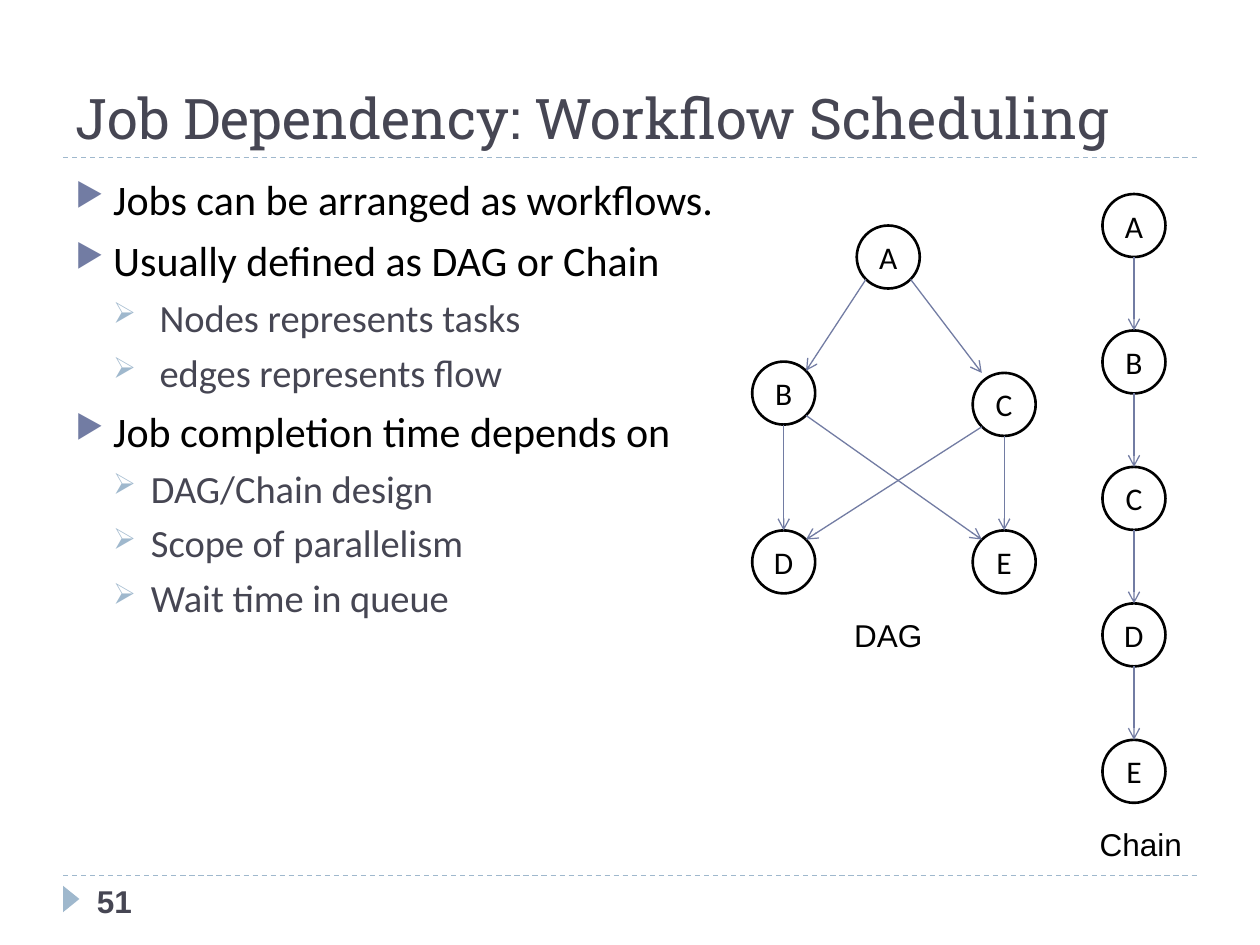
from lxml.etree import SubElement
from pptx import Presentation
from pptx.dml.color import RGBColor
from pptx.enum.dml import MSO_LINE
from pptx.enum.shapes import MSO_CONNECTOR, MSO_SHAPE
from pptx.enum.text import MSO_ANCHOR, PP_ALIGN
from pptx.oxml.ns import qn
from pptx.util import Inches, Pt

BLACK = RGBColor(0x00, 0x00, 0x00)
WHITE = RGBColor(0xFF, 0xFF, 0xFF)
SLATE = RGBColor(0x46, 0x46, 0x53)
INDIGO = RGBColor(0x72, 0x7C, 0xA3)
PALE_BLUE = RGBColor(0x9F, 0xB8, 0xCD)

RADIUS = 0.25
DIAGONAL = 0.71
CHAIN_X, CHAIN_TOP, CHAIN_STEP = 9, 1.79, 1.083
LEVELS = [("▶", INDIGO, 24, BLACK, 0.3, 6), ("➢", PALE_BLUE, 22, SLATE, 0.6, 5)]
BULLETS = [
    (0, ["Jobs can be arranged as workflows."]),
    (0, ["Usually defined as DAG or Chain"]),
    (1, [" ", "Nodes represents tasks"]),
    (1, [" edges represents flow"]),
    (0, ["Job completion time depends on"]),
    (1, ["DAG/Chain design"]),
    (1, ["Scope of parallelism"]),
    (1, ["Wait time in queue"]),
]
DAG_NODES = {"A": (7.05, 2.04), "B": (6.22, 3.12), "C": (7.97, 3.21),
             "D": (6.22, 4.46), "E": (7.97, 4.46)}
TOP, BOTTOM = (0, -1), (0, 1)
TOP_LEFT, TOP_RIGHT = (-DIAGONAL, -DIAGONAL), (DIAGONAL, -DIAGONAL)
BOTTOM_LEFT, BOTTOM_RIGHT = (-DIAGONAL, DIAGONAL), (DIAGONAL, DIAGONAL)
DAG_EDGES = [
    ("A", BOTTOM_LEFT, "B", TOP_RIGHT),
    ("A", BOTTOM_RIGHT, "C", (-DIAGONAL, -1)),
    ("B", BOTTOM, "D", TOP),
    ("C", BOTTOM, "E", TOP),
    ("B", BOTTOM_RIGHT, "E", TOP_LEFT),
    ("C", BOTTOM_LEFT, "D", TOP_RIGHT),
]


def add_run(paragraph, text, size, color, font="Calibri", bold=False):
    """Append one formatted run to a paragraph."""
    run = paragraph.add_run()
    run.text = text
    run.font.name = font
    run.font.size = Pt(size)
    run.font.bold = bold
    run.font.color.rgb = color


def add_line(slide, start, end, color):
    """Draw a thin straight connector without a shadow."""
    line = slide.shapes.add_connector(
        MSO_CONNECTOR.STRAIGHT, *map(Inches, (*start, *end)))
    line.line.color.rgb = color
    line.line.width = Pt(0.75)
    SubElement(line._element.spPr, qn("a:effectLst"))
    return line


def add_rule(slide, y):
    """Draw a dashed rule across the slide."""
    add_line(slide, (0.5, y), (9.5, y), PALE_BLUE).line.dash_style = MSO_LINE.DASH


def add_edge(slide, start_center, start_port, end_center, end_port):
    """Draw an arrow between ports given in radii from the node centers."""
    start, end = (
        [middle + RADIUS * offset for middle, offset in zip(center, port)]
        for center, port in ((start_center, start_port), (end_center, end_port)))
    arrow = add_line(slide, start, end, INDIGO)
    SubElement(arrow.line._get_or_add_ln(), qn("a:tailEnd"), type="arrow")


def add_node(slide, label, center):
    """Draw a labelled circle around a center point."""
    x, y = center
    node = slide.shapes.add_shape(
        MSO_SHAPE.FLOWCHART_CONNECTOR, Inches(x - RADIUS), Inches(y - RADIUS),
        Inches(2 * RADIUS), Inches(2 * RADIUS))
    node.shadow.inherit = False
    node.fill.solid()
    node.fill.fore_color.rgb = WHITE
    node.line.color.rgb = BLACK
    node.line.width = Pt(1.5)
    frame = node.text_frame
    frame.vertical_anchor = MSO_ANCHOR.MIDDLE
    frame.paragraphs[0].alignment = PP_ALIGN.CENTER
    add_run(frame.paragraphs[0], label, 18, BLACK)


def add_label(slide, text, left, top, width, color=BLACK, bold=False):
    """Add a one-line Arial text box."""
    box = slide.shapes.add_textbox(*map(Inches, (left, top, width, 0.4)))
    box.text_frame.word_wrap = False
    add_run(box.text_frame.paragraphs[0], text, 18, color, "Arial", bold)


def add_title(slide, text):
    """Place and fill the title placeholder."""
    title = slide.shapes.title
    title.left, title.top, title.width, title.height = map(Inches, (0.5, 0.17, 9, 1.08))
    title.text_frame.vertical_anchor = MSO_ANCHOR.BOTTOM
    paragraph = title.text_frame.paragraphs[0]
    paragraph.alignment = PP_ALIGN.LEFT
    add_run(paragraph, text, 32, SLATE, "Roboto Slab")


def format_bullet(paragraph, character, color, indent):
    """Give a paragraph a hanging coloured bullet."""
    properties = paragraph._p.get_or_add_pPr()
    properties.set("marL", str(Inches(indent)))
    properties.set("indent", str(-Inches(0.3)))
    bullet_color = SubElement(properties, qn("a:buClr"))
    SubElement(bullet_color, qn("a:srgbClr"), val=str(color))
    SubElement(properties, qn("a:buSzPct"), val="76000")
    SubElement(properties, qn("a:buChar"), char=character)


def add_bullets(slide):
    """Add the two-level bullet list."""
    box = slide.shapes.add_textbox(*map(Inches, (0.5, 1.33, 9, 5.4)))
    frame = box.text_frame
    frame.word_wrap = True
    for index, (level, texts) in enumerate(BULLETS):
        paragraph = frame.add_paragraph() if index else frame.paragraphs[0]
        character, bullet_color, size, color, indent, space = LEVELS[level]
        paragraph.level = level
        paragraph.space_before = Pt(space)
        format_bullet(paragraph, character, bullet_color, indent)
        for text in texts:
            add_run(paragraph, text, size, color)


def add_dag(slide):
    """Draw the directed acyclic graph."""
    for label, center in DAG_NODES.items():
        add_node(slide, label, center)
    for start, start_port, end, end_port in DAG_EDGES:
        add_edge(slide, DAG_NODES[start], start_port, DAG_NODES[end], end_port)
    add_label(slide, "DAG", 6.68, 4.84, 0.75)


def add_chain(slide):
    """Draw the vertical chain of evenly spaced nodes."""
    centers = [(CHAIN_X, CHAIN_TOP + CHAIN_STEP * row) for row in range(5)]
    for label, center in zip("ABCDE", centers):
        add_node(slide, label, center)
    for upper, lower in zip(centers, centers[1:]):
        add_edge(slide, upper, BOTTOM, lower, TOP)
    add_label(slide, "Chain", 8.63, 6.5, 0.86)


def add_footer(slide):
    """Draw the page marker and the page number."""
    marker = slide.shapes.add_shape(
        MSO_SHAPE.ISOSCELES_TRIANGLE, *map(Inches, (0.46, 7.07, 0.21, 0.13)))
    marker.rotation = 90
    marker.shadow.inherit = False
    marker.fill.solid()
    marker.fill.fore_color.rgb = PALE_BLUE
    marker.line.fill.background()
    add_label(slide, "51", 0.67, 6.95, 2.17, SLATE, True)


def main():
    """Build and save the slide."""
    presentation = Presentation()
    presentation.slide_width, presentation.slide_height = Inches(10), Inches(7.5)
    slide = presentation.slides.add_slide(presentation.slide_layouts[5])
    for y in (1.25, 6.95):
        add_rule(slide, y)
    add_title(slide, "Job Dependency: Workflow Scheduling")
    add_bullets(slide)
    add_dag(slide)
    add_chain(slide)
    add_footer(slide)
    presentation.save("out.pptx")


if __name__ == "__main__":
    main()
